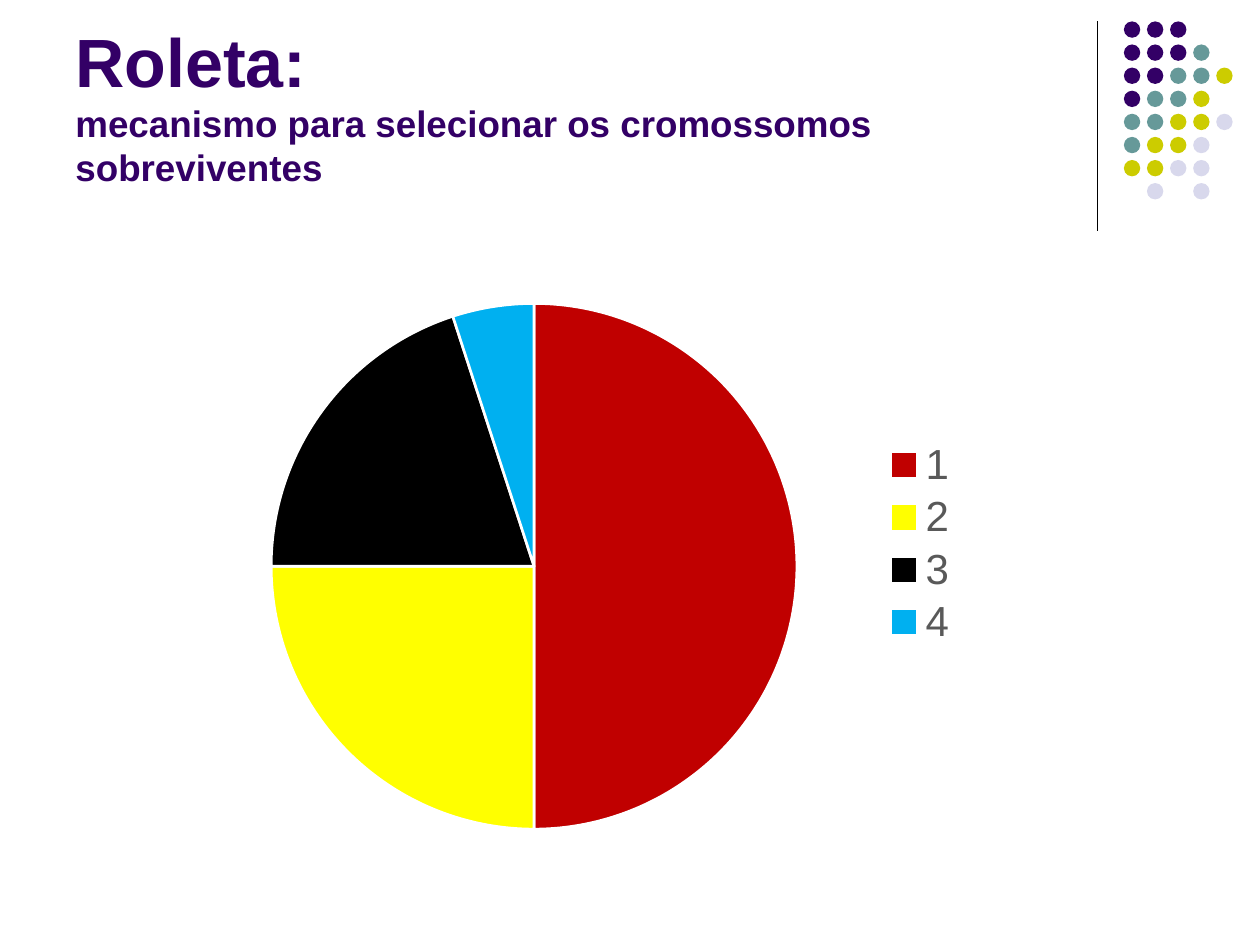
import pptx
import pptx.chart.data
import pptx.dml.color
import pptx.enum.chart
import pptx.enum.shapes
import pptx.enum.text
import pptx.util
from lxml import etree
from pptx.util import Inches, Pt

FONT = "Arial"
DOT_COLORS = {"P": "330066", "T": "669999", "Y": "CCCC00", "L": "D8D8EC"}
DOT_ROWS = ["PPP", "PPPT", "PPTTY", "PTTY", "TTYYL", "TYYL", "YYLL", " L L"]
SLICES = [("1", 50, "C00000"), ("2", 25, "FFFF00"), ("3", 20, "000000"), ("4", 5, "00B0F0")]


def rgb(color):
    return pptx.dml.color.RGBColor.from_string(color)


def set_fill(part, color):
    part.fill.solid()
    part.fill.fore_color.rgb = rgb(color)


def set_layout(element, x, y, w, h, inner=False):
    """Place a chart part by fractions of the chart area."""
    ns = "http://schemas.openxmlformats.org/drawingml/2006/chart"
    for old in element.findall(f"{{{ns}}}layout"):
        element.remove(old)
    layout = etree.Element(f"{{{ns}}}layout")
    manual = etree.SubElement(layout, f"{{{ns}}}manualLayout")
    values = [("layoutTarget", "inner")] if inner else []
    values += [("xMode", "edge"), ("yMode", "edge"), ("x", x), ("y", y), ("w", w), ("h", h)]
    for tag, value in values:
        etree.SubElement(manual, f"{{{ns}}}{tag}").set("val", str(value))
    position = element.find(f"{{{ns}}}legendPos")
    element.insert(0 if position is None else element.index(position) + 1, layout)


def add_ornament(slide, left, top, height):
    # Vertical rule
    line = slide.shapes.add_connector(
        pptx.enum.shapes.MSO_CONNECTOR.STRAIGHT,
        Inches(left), Inches(top), Inches(left), Inches(top + height))
    line.line.color.rgb = rgb("000000")
    line.line.width = Pt(0.75)
    etree.SubElement(line._element.spPr,
                     "{http://schemas.openxmlformats.org/drawingml/2006/main}effectLst")

    # Dot grid
    pitch, size = 0.55 / 3, 0.13
    group = slide.shapes.add_group_shape()
    for row, codes in enumerate(DOT_ROWS):
        for col, code in enumerate(codes):
            if code == " ":
                continue
            dot = group.shapes.add_shape(
                pptx.enum.shapes.MSO_SHAPE.OVAL,
                Inches(left + 0.21 + col * pitch), Inches(top + row * pitch),
                Inches(size), Inches(size))
            dot.shadow.inherit = False
            set_fill(dot, DOT_COLORS[code])
            dot.line.fill.background()


def add_title(slide, left, top, width, height):
    box = slide.shapes.add_textbox(Inches(left), Inches(top), Inches(width), Inches(height))
    tf = box.text_frame
    tf.word_wrap = True
    tf.vertical_anchor = pptx.enum.text.MSO_ANCHOR.BOTTOM
    p = tf.paragraphs[0]
    p.font.name = FONT
    p.font.bold = True
    p.font.color.rgb = rgb("330066")
    r = p.add_run()
    r.text = "Roleta: "
    r.font.size = Pt(39)
    p.add_line_break()
    r = p.add_run()
    r.text = "mecanismo para selecionar os cromossomos sobreviventes"
    r.font.size = Pt(21)


def add_roulette(slide, left, top, width, height):
    data = pptx.chart.data.CategoryChartData()
    data.categories = [name for name, _, _ in SLICES]
    data.add_series("Series 1", [value for _, value, _ in SLICES])
    chart = slide.shapes.add_chart(
        pptx.enum.chart.XL_CHART_TYPE.PIE,
        Inches(left), Inches(top), Inches(width), Inches(height), data).chart
    chart.has_title = False
    chart.font.name = FONT
    chart.font.size = Pt(10)
    chart.font.color.rgb = rgb("000000")

    # Slices
    plot = chart.plots[0]
    plot.vary_by_categories = True
    for i, (_, _, color) in enumerate(SLICES):
        form = plot.series[0].points[i].format
        set_fill(form, color)
        form.line.color.rgb = rgb("FFFFFF")
        form.line.width = Pt(1.5)

    # Legend
    chart.has_legend = True
    legend = chart.legend
    legend.position = pptx.enum.chart.XL_LEGEND_POSITION.RIGHT
    legend.include_in_layout = False
    legend.font.name = FONT
    legend.font.size = Pt(24)
    legend.font.color.rgb = rgb("595959")

    set_layout(plot._element.getparent(), 0.12, 0.03, 0.64, 0.94, inner=True)
    set_layout(legend._element, 0.86, 0.27, 0.1, 0.38)


def main():
    prs = pptx.Presentation()
    prs.slide_width, prs.slide_height = Inches(10), Inches(7.5)
    slide = prs.slides.add_slide(prs.slide_layouts[6])
    add_ornament(slide, 8.71, 0.17, 1.66)
    add_title(slide, 0.5, 0.13, 8.25, 1.42)
    add_roulette(slide, 1.37, 2.25, 6.52, 4.49)
    prs.save("out.pptx")


if __name__ == "__main__":
    main()
